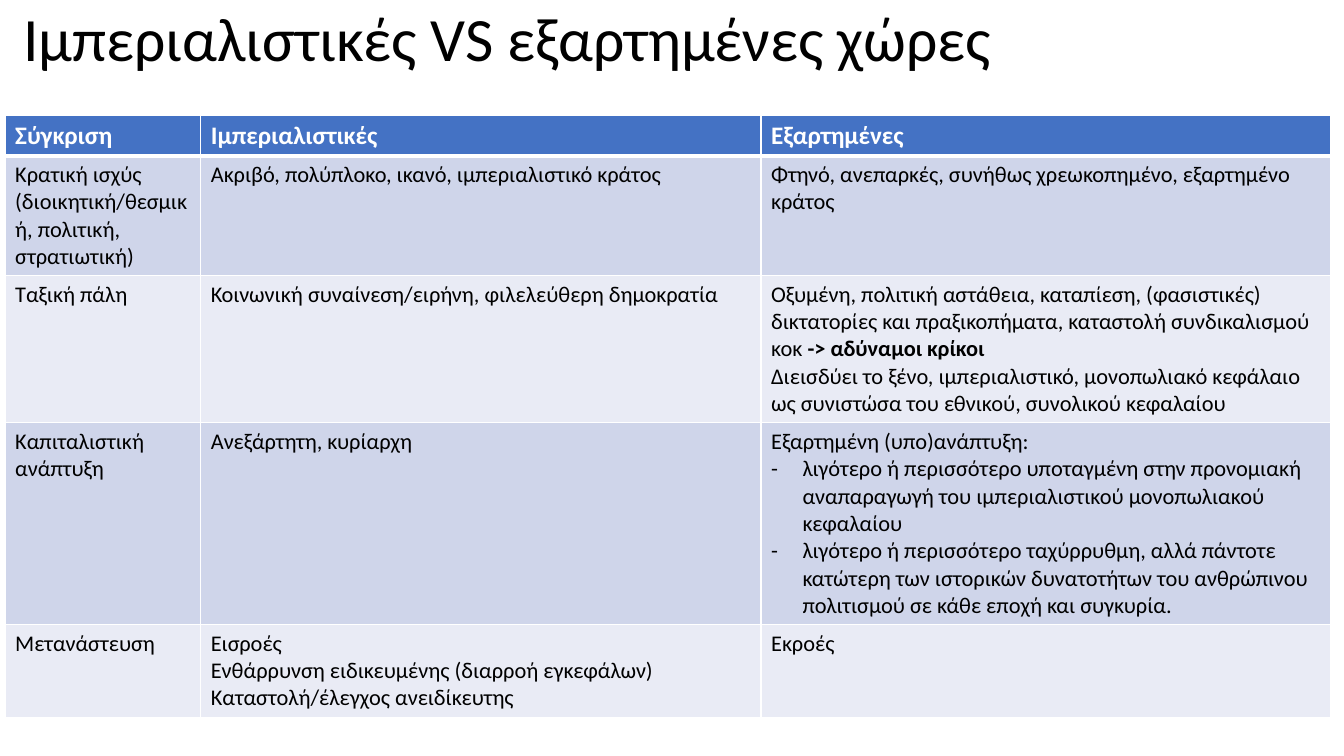
from dataclasses import dataclass
from typing import Any

import lxml.etree
import pptx
import pptx.dml.color
import pptx.enum.text
import pptx.oxml.ns
import pptx.util

Cm = pptx.util.Cm
FONT = "Calibri"
BLACK, WHITE = "000000", "FFFFFF"
HEADER_FILL = "4472C4"
BAND_FILLS = ("CFD5EA", "E9EBF5")
COLUMN_WIDTHS = (4.93, 14.12, 14.35)
BULLET_INDENT = 0.79


@dataclass(frozen=True)
class Line:
    text: str
    bold_ending: str = ""
    bullet: bool = False


@dataclass(frozen=True)
class Comparison:
    height: float
    topic: str
    imperialist: tuple[Line, ...]
    dependent: tuple[Line, ...]


HEADINGS = ("Σύγκριση", "Ιμπεριαλιστικές", "Εξαρτημένες")
HEADING_HEIGHT = 1.02
COMPARISONS = (
    Comparison(
        3.02,
        "Κρατική ισχύς (διοικητική/θεσμική, πολιτική, στρατιωτική)",
        (Line("Ακριβό, πολύπλοκο, ικανό, ιμπεριαλιστικό κράτος"),),
        (Line("Φτηνό, ανεπαρκές, συνήθως χρεωκοπημένο, εξαρτημένο κράτος"),),
    ),
    Comparison(
        3.7,
        "Ταξική πάλη",
        (Line("Κοινωνική συναίνεση/ειρήνη, φιλελεύθερη δημοκρατία"),),
        (
            Line(
                "Οξυμένη, πολιτική αστάθεια, καταπίεση, (φασιστικές) δικτατορίες "
                "και πραξικοπήματα, καταστολή συνδικαλισμού κοκ ",
                bold_ending="-> αδύναμοι κρίκοι",
            ),
            Line(
                "Διεισδύει το ξένο, ιμπεριαλιστικό, μονοπωλιακό κεφάλαιο "
                "ως συνιστώσα του εθνικού, συνολικού κεφαλαίου"
            ),
        ),
    ),
    Comparison(
        5.08,
        "Καπιταλιστική ανάπτυξη",
        (Line("Ανεξάρτητη, κυρίαρχη"),),
        (
            Line("Εξαρτημένη (υπο)ανάπτυξη:"),
            Line(
                "λιγότερο ή περισσότερο υποταγμένη στην προνομιακή "
                "αναπαραγωγή του ιμπεριαλιστικού μονοπωλιακού κεφαλαίου",
                bullet=True,
            ),
            Line(
                "λιγότερο ή περισσότερο ταχύρρυθμη, αλλά πάντοτε κατώτερη των "
                "ιστορικών δυνατοτήτων του ανθρώπινου πολιτισμού σε κάθε εποχή και συγκυρία.",
                bullet=True,
            ),
        ),
    ),
    Comparison(
        2.33,
        "Μετανάστευση",
        (
            Line("Εισροές"),
            Line("Ενθάρρυνση ειδικευμένης (διαρροή εγκεφάλων)"),
            Line("Καταστολή/έλεγχος ανειδίκευτης"),
        ),
        (Line("Εκροές"),),
    ),
)


def color(value: str) -> pptx.dml.color.RGBColor:
    return pptx.dml.color.RGBColor.from_string(value)


def add_element(parent: Any, tag: str, **attributes: str) -> Any:
    return lxml.etree.SubElement(parent, pptx.oxml.ns.qn(tag), attributes)


def add_text(para: Any, text: str, *, size: float, ink: str = BLACK, bold: bool = False) -> None:
    span = para.add_run()
    span.text = text
    span.font.name = FONT
    span.font.size = pptx.util.Pt(size)
    span.font.bold = bold
    span.font.color.rgb = color(ink)


def add_dash(para: Any) -> None:
    properties = para._p.get_or_add_pPr()
    properties.set("marL", str(Cm(BULLET_INDENT)))
    properties.set("indent", str(-Cm(BULLET_INDENT)))
    add_element(properties, "a:buFont", typeface=FONT)
    add_element(properties, "a:buChar", char="-")


def style_cell(cell: Any, fill: str, *, top: float = 1, bottom: float = 1) -> None:
    properties = cell._tc.get_or_add_tcPr()
    for side, width in (("L", 1), ("R", 1), ("T", top), ("B", bottom)):
        border = add_element(properties, f"a:ln{side}", w=str(pptx.util.Pt(width)))
        add_element(add_element(border, "a:solidFill"), "a:srgbClr", val=WHITE)
    cell.fill.solid()
    cell.fill.fore_color.rgb = color(fill)


def fill_cell(cell: Any, lines: tuple[Line, ...], **text_format: Any) -> None:
    frame = cell.text_frame
    for index, line in enumerate(lines):
        para = frame.add_paragraph() if index else frame.paragraphs[0]
        if line.bullet:
            add_dash(para)
        add_text(para, line.text, **text_format)
        if line.bold_ending:
            add_text(para, line.bold_ending, **{**text_format, "bold": True})


def add_title(page: Any, text: str) -> None:
    box = page.shapes.title
    box.left, box.top, box.width, box.height = Cm(0.33), Cm(-0.79), Cm(29.21), Cm(3.68)
    frame = box.text_frame
    frame.word_wrap = True
    frame.auto_size = pptx.enum.text.MSO_AUTO_SIZE.NONE
    frame.vertical_anchor = pptx.enum.text.MSO_ANCHOR.MIDDLE
    para = frame.paragraphs[0]
    para.alignment = pptx.enum.text.PP_ALIGN.LEFT
    para.line_spacing = 0.9
    add_text(para, text, size=44)


def add_comparison_table(page: Any) -> None:
    heights = (HEADING_HEIGHT, *(comparison.height for comparison in COMPARISONS))
    table = page.shapes.add_table(
        len(heights), len(COLUMN_WIDTHS),
        Cm(0.13), Cm(2.9), Cm(sum(COLUMN_WIDTHS)), Cm(sum(heights)),
    ).table
    for column, width in zip(table.columns, COLUMN_WIDTHS):
        column.width = Cm(width)
    for row, height in zip(table.rows, heights):
        row.height = Cm(height)

    for cell, heading in zip(table.rows[0].cells, HEADINGS):
        style_cell(cell, HEADER_FILL, bottom=3)
        fill_cell(cell, (Line(heading),), size=18, ink=WHITE, bold=True)

    for index, comparison in enumerate(COMPARISONS):
        contents = ((Line(comparison.topic),), comparison.imperialist, comparison.dependent)
        for cell, lines in zip(table.rows[index + 1].cells, contents):
            style_cell(cell, BAND_FILLS[index % 2], top=1 if index else 3)
            fill_cell(cell, lines, size=16)


def main() -> None:
    deck = pptx.Presentation()
    deck.slide_width, deck.slide_height = Cm(33.87), Cm(19.05)
    page = deck.slides.add_slide(deck.slide_layouts.get_by_name("Title Only"))
    add_title(page, "Ιμπεριαλιστικές VS εξαρτημένες χώρες")
    add_comparison_table(page)
    deck.save("out.pptx")


if __name__ == "__main__":
    main()
